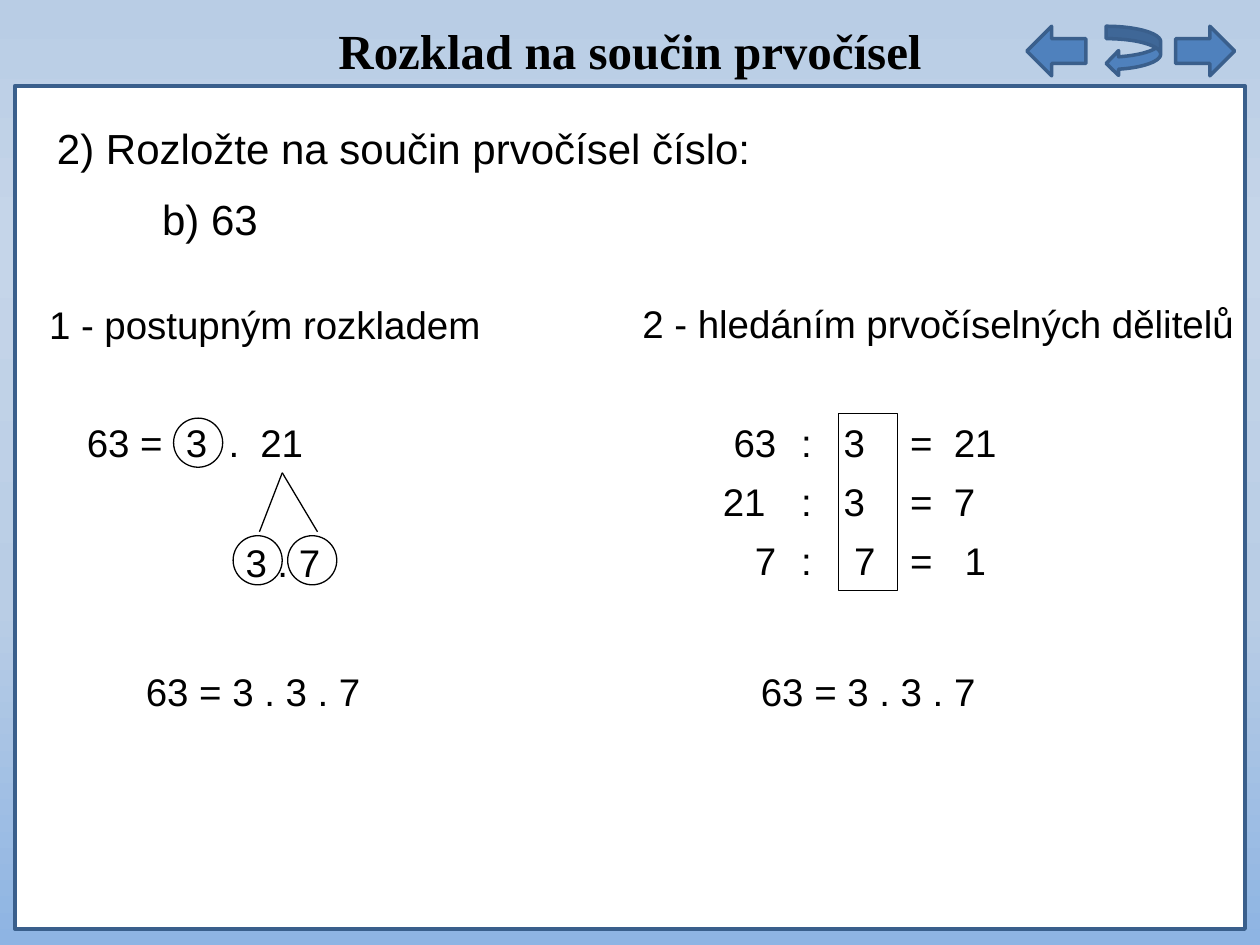
from dataclasses import dataclass
from typing import Any, NamedTuple

from lxml.etree import SubElement
from pptx import Presentation
from pptx.dml.color import RGBColor
from pptx.enum.shapes import MSO_CONNECTOR, MSO_SHAPE
from pptx.enum.text import MSO_ANCHOR, MSO_AUTO_SIZE, PP_ALIGN
from pptx.oxml.ns import qn
from pptx.util import Cm, Pt


@dataclass(frozen=True)
class Theme:
    """Colours, fonts and sizes of the slide."""
    ink: str = "000000"
    panel: str = "FFFFFF"
    button: str = "4F81BD"
    border: str = "3A5F8C"
    sky: tuple = ((0, "B9CDE5"), (25, "C5D5E9"), (64, "B9CDE5"), (100, "8EB4E3"))
    heading_font: str = "Times New Roman"
    body_font: str = "Arial"
    heading_size: int = 28
    task_size: int = 24
    body_size: int = 22
    thick: float = 2
    thin: float = 0.75


class Label(NamedTuple):
    """A line of text at a place given in centimetres."""
    words: str
    left: float
    top: float
    width: float
    align: PP_ALIGN = PP_ALIGN.LEFT
    wrap: bool = True


class Outline(NamedTuple):
    """A preset shape with its box in centimetres."""
    preset: MSO_SHAPE
    left: float
    top: float
    width: float
    height: float


class Division(NamedTuple):
    """One step of dividing by a prime."""
    dividend: str
    divisor: str
    quotient: str


THEME = Theme()
LINE_HEIGHT = 1.19
STEPS_TOP = 8.33
RESULT_TOP = 13.34
CIRCLE = 0.99
RESULT = "63 = 3 . 3 . 7"
DIVISIONS = (Division("63", "3 ", "21"), Division("21 ", "3 ", "7"), Division("7", "7", " 1"))
LABELS = (
    Label("1 - postupným rozkladem", 0.74, 5.94, 13),
    Label("2 - hledáním prvočíselných dělitelů", 12.7, 5.92, 12.6, wrap=False),
    Label("63 =", 1.5, STEPS_TOP, 2.8),
    Label("3", 3.5, STEPS_TOP, 1),
    Label(".", 4.36, STEPS_TOP, 0.8),
    Label("21", 5, STEPS_TOP, 1.6),
    Label("3 . 7", 4.7, 10.74, 2.95),
    Label(RESULT, 2.69, RESULT_TOP, 7.6),
    Label(RESULT, 15.09, RESULT_TOP, 7.6),
)
PRIME_MARKS = (
    Outline(MSO_SHAPE.RECTANGLE, 16.9, STEPS_TOP, 1.19, 3 * LINE_HEIGHT),
    Outline(MSO_SHAPE.OVAL, 3.5, 8.43, CIRCLE, CIRCLE),
    Outline(MSO_SHAPE.OVAL, 4.7, 10.8, CIRCLE, CIRCLE),
    Outline(MSO_SHAPE.OVAL, 5.8, 10.8, CIRCLE, CIRCLE),
)
BUTTONS = (
    Outline(MSO_SHAPE.LEFT_ARROW, 20.7, 0.53, 1.19, 1),
    Outline(MSO_SHAPE.CURVED_LEFT_ARROW, 22.3, 0.53, 1.1, 1),
    Outline(MSO_SHAPE.RIGHT_ARROW, 23.7, 0.53, 1.19, 1),
)


def format_text(paragraph: Any, size: int, name: str = THEME.body_font, bold: bool = False) -> None:
    """Apply font values to a paragraph."""
    for key, value in {"name": name, "size": Pt(size), "bold": bold}.items():
        setattr(paragraph.font, key, value)
    paragraph.font.color.rgb = RGBColor.from_string(THEME.ink)


def draw_label(slide: Any, label: Label, size: int = THEME.body_size) -> Any:
    """Add a text box and return its frame."""
    box = slide.shapes.add_textbox(Cm(label.left), Cm(label.top), Cm(label.width), Cm(LINE_HEIGHT))
    frame = box.text_frame
    frame.text = label.words
    for key, value in {"word_wrap": label.wrap, "auto_size": MSO_AUTO_SIZE.SHAPE_TO_FIT_TEXT}.items():
        setattr(frame, key, value)
    for paragraph in frame.paragraphs:
        paragraph.alignment = label.align
        format_text(paragraph, size)
    return frame


def draw_outline(slide: Any, outline: Outline, line: str, weight: float, fill: str = "") -> None:
    """Add a preset shape, hollow unless a fill is given."""
    shape = slide.shapes.add_shape(outline.preset, *map(Cm, outline[1:]))
    shape.shadow.inherit = False
    shape.line.color.rgb = RGBColor.from_string(line)
    shape.line.width = Pt(weight)
    if fill:
        shape.fill.solid()
        shape.fill.fore_color.rgb = RGBColor.from_string(fill)
    else:
        shape.fill.background()


def draw_branch(slide: Any, end_left: float) -> None:
    """Join 21 to one of its factors."""
    branch = slide.shapes.add_connector(
        MSO_CONNECTOR.STRAIGHT, Cm(5.69), Cm(9.53), Cm(end_left), Cm(10.72))
    branch.line.color.rgb = RGBColor.from_string(THEME.ink)
    branch.line.width = Pt(THEME.thin)
    SubElement(branch._element.spPr, qn("a:effectLst"))


def draw_division(slide: Any, division: Division, top: float) -> None:
    """Lay one division out in its five columns."""
    for cell in (
        Label(division.dividend, 13.9, top, 2, PP_ALIGN.RIGHT),
        Label(":", 15.9, top, 1),
        Label(division.divisor, 15.9, top, 2, PP_ALIGN.RIGHT),
        Label("=", 18.1, top, 1),
        Label(division.quotient, 18.98, top, 2),
    ):
        draw_label(slide, cell)


def paint_background(slide: Any) -> None:
    """Fill the background with the vertical sky gradient."""
    fill = slide.background.fill
    fill.gradient()
    fill.gradient_angle = 270
    stops = slide.background._cSld.find(".//" + qn("a:gsLst"))
    for stop in list(stops):
        stops.remove(stop)
    for percent, colour in THEME.sky:
        stop = SubElement(stops, qn("a:gs"), pos=str(percent * 1000))
        SubElement(stop, qn("a:srgbClr"), val=colour)


def write_title(slide: Any) -> None:
    """Place and format the heading."""
    title = slide.shapes.title
    place = {"left": Cm(0.3), "top": Cm(0.28), "width": Cm(24.8), "height": Cm(1.45)}
    for key, value in place.items():
        setattr(title, key, value)
    frame = title.text_frame
    frame.text = "Rozklad na součin prvočísel"
    for key, value in {"vertical_anchor": MSO_ANCHOR.TOP, "auto_size": MSO_AUTO_SIZE.NONE}.items():
        setattr(frame, key, value)
    frame.paragraphs[0].alignment = PP_ALIGN.CENTER
    format_text(frame.paragraphs[0], THEME.heading_size, THEME.heading_font, True)


def write_task(slide: Any) -> None:
    """Write the task with its indented number."""
    task = Label("2) Rozložte na součin prvočísel číslo:\nb) 63", 0.9, 2.34, 22.45)
    question, number = draw_label(slide, task, THEME.task_size).paragraphs
    question.space_after = Pt(12)
    number._p.get_or_add_pPr().set("marL", str(Cm(2.12)))


def main() -> None:
    """Build and save the slide."""
    deck = Presentation()
    deck.slide_width, deck.slide_height = Cm(25.4), Cm(19.05)
    slide = deck.slides.add_slide(deck.slide_layouts[5])
    paint_background(slide)
    write_title(slide)
    panel = Outline(MSO_SHAPE.RECTANGLE, 0.3, 1.73, 24.8, 17)
    draw_outline(slide, panel, THEME.border, THEME.thick, THEME.panel)
    write_task(slide)
    for label in LABELS:
        draw_label(slide, label)
    for row, division in enumerate(DIVISIONS):
        draw_division(slide, division, STEPS_TOP + row * LINE_HEIGHT)
    for factor_left in (5.23, 6.4):
        draw_branch(slide, factor_left)
    for mark in PRIME_MARKS:
        draw_outline(slide, mark, THEME.ink, THEME.thin)
    for button in BUTTONS:
        draw_outline(slide, button, THEME.border, THEME.thick, THEME.button)
    deck.save("out.pptx")


if __name__ == "__main__":
    main()
